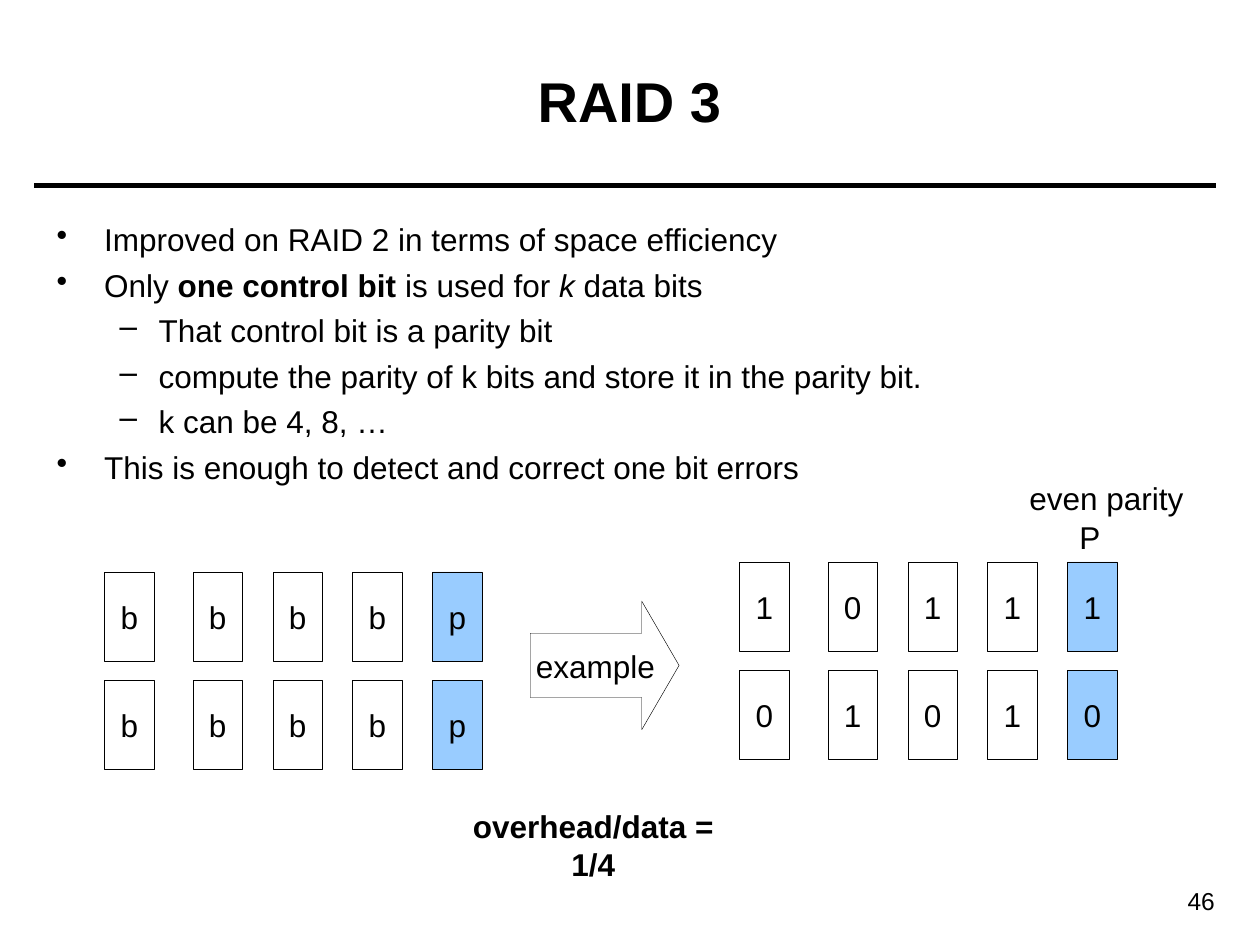
import pptx
import pptx.dml.color
import pptx.enum.shapes
import pptx.enum.text
import pptx.oxml.ns
import pptx.util
from lxml import etree
from pptx.util import Cm

COLORS = {"ink": "000000", "parity": "99CCFF"}
ALIGN = pptx.enum.text.PP_ALIGN
ANCHOR = pptx.enum.text.MSO_ANCHOR
SHAPE = pptx.enum.shapes.MSO_SHAPE
BULLETS = {0: ("•", 0.96, -0.96), 1: ("–", 2.06, -0.79)}
BODY = [
    (0, [("Improved on RAID 2 in terms of space efficiency", "")]),
    (0, [("Only ", ""), ("one control bit", "bold"), (" is used for ", ""),
         ("k", "italic"), (" data bits", "")]),
    (1, [("That control bit is a parity bit", "")]),
    (1, [("compute the parity of k bits and store it in the parity bit.", "")]),
    (1, [("k can be 4, 8, …", "")]),
    (0, [("This is enough to detect and correct one bit errors", "")]),
]


def color(name):
    """Return the named colour."""
    return pptx.dml.color.RGBColor.from_string(COLORS[name])


def set_font(paragraph, size=18, bold=False):
    """Set the slide font on a paragraph."""
    font = paragraph.font
    font.name = "Arial"
    font.size = pptx.util.Pt(size)
    font.bold = bold
    font.color.rgb = color("ink")


def write_text(shape, text, size=18, bold=False, align=ALIGN.CENTER,
               anchor=ANCHOR.MIDDLE, wrap=False):
    """Write one paragraph into a shape."""
    frame = shape.text_frame
    frame.word_wrap = wrap
    frame.vertical_anchor = anchor
    paragraph = frame.paragraphs[0]
    paragraph.text = text
    paragraph.alignment = align
    set_font(paragraph, size, bold)


def add_label(slide, text, left, top, width, height=1.02, **style):
    """Add a text box holding one paragraph."""
    box = slide.shapes.add_textbox(Cm(left), Cm(top), Cm(width), Cm(height))
    write_text(box, text, **style)


def add_outlined(slide, kind, text, left, top, width, height, fill=None):
    """Add a thinly outlined shape with centred text."""
    shape = slide.shapes.add_shape(kind, Cm(left), Cm(top), Cm(width), Cm(height))
    shape.shadow.inherit = False
    if fill:
        shape.fill.solid()
        shape.fill.fore_color.rgb = color(fill)
    else:
        shape.fill.background()
    shape.line.color.rgb = color("ink")
    shape.line.width = pptx.util.Pt(0.25)
    write_text(shape, text)
    return shape


def add_header(slide, left, top, width, height):
    """Add the title and the rule beneath it."""
    add_label(slide, "RAID 3", left, top, width, height, size=32, bold=True, wrap=True)
    rule_top = Cm(top + height + 0.13)
    rule = slide.shapes.add_connector(
        pptx.enum.shapes.MSO_CONNECTOR.STRAIGHT,
        Cm(left - 0.2), rule_top, Cm(left + width + 0.03), rule_top)
    rule.line.color.rgb = color("ink")
    rule.line.width = pptx.util.Pt(3)
    etree.SubElement(rule._element.spPr, pptx.oxml.ns.qn("a:effectLst"))


def add_body(slide, left, top, width, height):
    """Add the two-level bullet list."""
    box = slide.shapes.add_textbox(Cm(left), Cm(top), Cm(width), Cm(height))
    frame = box.text_frame
    frame.word_wrap = True
    for index, (level, runs) in enumerate(BODY):
        paragraph = frame.add_paragraph() if index else frame.paragraphs[0]
        paragraph.level = level
        paragraph.space_before = pptx.util.Pt(4.4)
        set_font(paragraph)
        for text, emphasis in runs:
            run = paragraph.add_run()
            run.text = text
            if emphasis:
                setattr(run.font, emphasis, True)
        mark, margin, indent = BULLETS[level]
        properties = paragraph._p.get_or_add_pPr()
        properties.set("marL", str(Cm(margin)))
        properties.set("indent", str(Cm(indent)))
        bullet = etree.Element(pptx.oxml.ns.qn("a:buChar"), char=mark)
        properties.find(pptx.oxml.ns.qn("a:defRPr")).addprevious(bullet)


def add_bit_grid(slide, left, top, rows):
    """Add rows of data bits, each ending in a shaded parity bit."""
    for row, bits in enumerate(rows):
        for column, bit in enumerate(bits):
            offset = 1.78 + 1.61 * (column - 1) if column else 0
            fill = "parity" if column == len(bits) - 1 else None
            add_outlined(slide, SHAPE.RECTANGLE, bit, left + offset,
                         top + 2.18 * row, 1, 1.8, fill)


def add_example(slide, left, top):
    """Add the general layout, the arrow and the worked example."""
    add_bit_grid(slide, left, top + 0.2, ["bbbbp", "bbbbp"])
    add_bit_grid(slide, left + 12.8, top, ["10111", "01010"])
    arrow = add_outlined(slide, SHAPE.RIGHT_ARROW, "example",
                         left + 8.58, top + 0.79, 3, 2.59)
    arrow.adjustments[0] = 0.5
    arrow.adjustments[1] = 0.29
    add_label(slide, "P", left + 19.4, top - 1.02, 0.91)
    add_label(slide, "overhead/data = 1/4", left + 6.65, top + 5.2, 6.4, bold=True)
    add_label(slide, "even parity", left + 18.39, top - 1.8, 3.61)


def main():
    """Build and save the slide."""
    presentation = pptx.Presentation()
    presentation.slide_width = Cm(25.4)
    presentation.slide_height = Cm(19.05)
    slide = presentation.slides.add_slide(presentation.slide_layouts[6])
    add_header(slide, 0.89, 0.43, 23.6, 3.18)
    add_label(slide, "46", 22.1, 17.73, 2.64, 0.86, size=14,
              align=ALIGN.RIGHT, anchor=ANCHOR.TOP, wrap=True)
    add_body(slide, 0.89, 4.32, 23.6, 13)
    add_example(slide, 2.11, 11.33)
    presentation.save("out.pptx")


if __name__ == "__main__":
    main()
